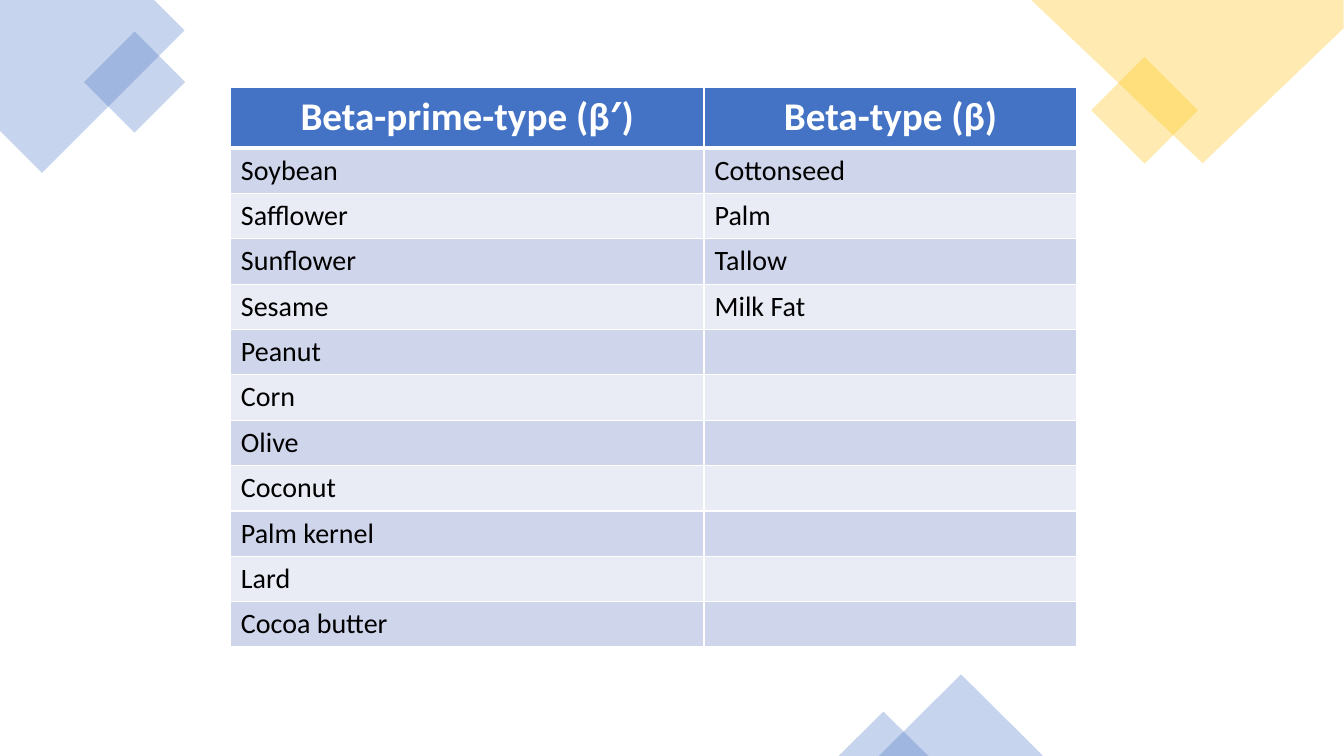
"""Build the slide comparing beta-prime-type and beta-type fats."""
from dataclasses import dataclass
from itertools import zip_longest

from lxml import etree
from pptx import Presentation
from pptx import util as u
from pptx.dml.color import RGBColor
from pptx.enum import shapes, text
from pptx.oxml import ns

Pt = u.Pt
COLORS = {
    "blue": "4472C4",
    "gold": "FFC000",
    "white": "FFFFFF",
    "black": "000000",
    "band_dark": "CFD5EA",
    "band_light": "E9EBF5",
}
HEADERS = ("Beta-prime-type (β′)", "Beta-type (β)")
BETA_PRIME = ("Soybean", "Safflower", "Sunflower", "Sesame", "Peanut", "Corn",
              "Olive", "Coconut", "Palm kernel", "Lard", "Cocoa butter")
BETA = ("Cottonseed", "Palm", "Tallow", "Milk Fat")
COLUMN_WIDTHS = (338.4, 266.4)
HEADER_HEIGHT, ROW_HEIGHT = 60 * 0.72, 32.4


@dataclass(frozen=True)
class Preset:
    """A translucent preset shape."""
    kind: shapes.MSO_SHAPE
    left: float
    top: float
    width: float
    height: float
    color: str
    rotation: float = 0


@dataclass(frozen=True)
class Outline:
    """A translucent polygon with points relative to its left and top."""
    left: float
    top: float
    points: tuple[tuple[float, float], ...]
    color: str
    rotation: float


RECT = shapes.MSO_SHAPE.RECTANGLE
TRIANGLE = shapes.MSO_SHAPE.ISOSCELES_TRIANGLE
DECORATIONS = (
    Outline(-29.5, -20.2, ((144, 78), (66.2, 0), (0, 66.2), (0, 108.7), (144, 108.7)),
            "blue", 315),
    Preset(RECT, 70.6, 33.1, 51.1, 51.1, "blue", 315),
    Preset(RECT, 790.6, 51.8, 54, 54, "gold", 315),
    Outline(736.6, 0, ((0, 116.6), (223.2, 116.6), (100.8, 0), (0, 96.5)),
            "gold", 180),
    Preset(TRIANGLE, 627.8, 481.7, 117.4, 58.3, "blue"),
    Preset(TRIANGLE, 599, 508.3, 64.1, 31.7, "blue"),
)


def rgb(name: str) -> RGBColor:
    """Return the named colour."""
    return RGBColor.from_string(COLORS[name])


def draw_decoration(slide, item: Preset | Outline) -> None:
    """Draw one decoration with a 30 percent opaque fill."""
    if isinstance(item, Outline):
        points = [(Pt(x), Pt(y)) for x, y in item.points]
        builder = slide.shapes.build_freeform(*points[0])
        builder.add_line_segments(points[1:], close=True)
        sp = builder.convert_to_shape(Pt(item.left), Pt(item.top))
    else:
        sp = slide.shapes.add_shape(item.kind, Pt(item.left), Pt(item.top),
                                    Pt(item.width), Pt(item.height))
    sp.rotation = item.rotation
    sp.shadow.inherit = False
    sp.line.fill.background()
    sp.fill.solid()
    sp.fill.fore_color.rgb = rgb(item.color)
    color = sp.fill._xPr.find(".//" + ns.qn("a:srgbClr"))
    etree.SubElement(color, ns.qn("a:alpha"), val="30000")


def set_borders(cell, top: float, bottom: float) -> None:
    """Give a cell white borders, with the sides one point wide."""
    tc_pr = cell._tc.get_or_add_tcPr()
    widths = {"a:lnL": 1, "a:lnR": 1, "a:lnT": top, "a:lnB": bottom}
    for i, (tag, width) in enumerate(widths.items()):
        ln = etree.Element(ns.qn(tag), w=str(Pt(width)))
        fill = etree.SubElement(ln, ns.qn("a:solidFill"))
        etree.SubElement(fill, ns.qn("a:srgbClr"), val=COLORS["white"])
        tc_pr.insert(i, ln)


def fill_cell(cell, words: str, row: int) -> None:
    """Write and format one cell according to its row."""
    header = row == 0
    band = "blue" if header else "band_dark" if row % 2 else "band_light"
    cell.fill.solid()
    cell.fill.fore_color.rgb = rgb(band)
    cell.margin_left = cell.margin_right = Pt(7.6)
    cell.margin_top = cell.margin_bottom = Pt(3.8)
    set_borders(cell, 3 if row == 1 else 1, 3 if header else 1)
    p = cell.text_frame.paragraphs[0]
    p.text = words
    p.alignment = text.PP_ALIGN.CENTER if header else text.PP_ALIGN.LEFT
    p.font.name = "Calibri"
    p.font.size = Pt(28 if header else 20)
    p.font.bold = header
    p.font.color.rgb = rgb("white" if header else "black")


def draw_table(slide) -> None:
    """Draw the table of fats by crystal type."""
    rows = [HEADERS, *zip_longest(BETA_PRIME, BETA, fillvalue="")]
    height = HEADER_HEIGHT + ROW_HEIGHT * len(BETA_PRIME)
    table = slide.shapes.add_table(len(rows), len(HEADERS), Pt(164.5), Pt(62.6),
                                   Pt(sum(COLUMN_WIDTHS)), Pt(height)).table
    for column, width in zip(table.columns, COLUMN_WIDTHS):
        column.width = Pt(width)
    for i, words in enumerate(rows):
        table.rows[i].height = Pt(ROW_HEIGHT if i else HEADER_HEIGHT)
        for j, word in enumerate(words):
            fill_cell(table.cell(i, j), word, i)


def main() -> None:
    """Build and save the presentation."""
    prs = Presentation()
    prs.slide_width, prs.slide_height = Pt(960), Pt(540)
    s = prs.slides.add_slide(prs.slide_layouts.get_by_name("Blank"))
    for item in DECORATIONS:
        draw_decoration(s, item)
    draw_table(s)
    prs.save("out.pptx")


if __name__ == "__main__":
    main()
